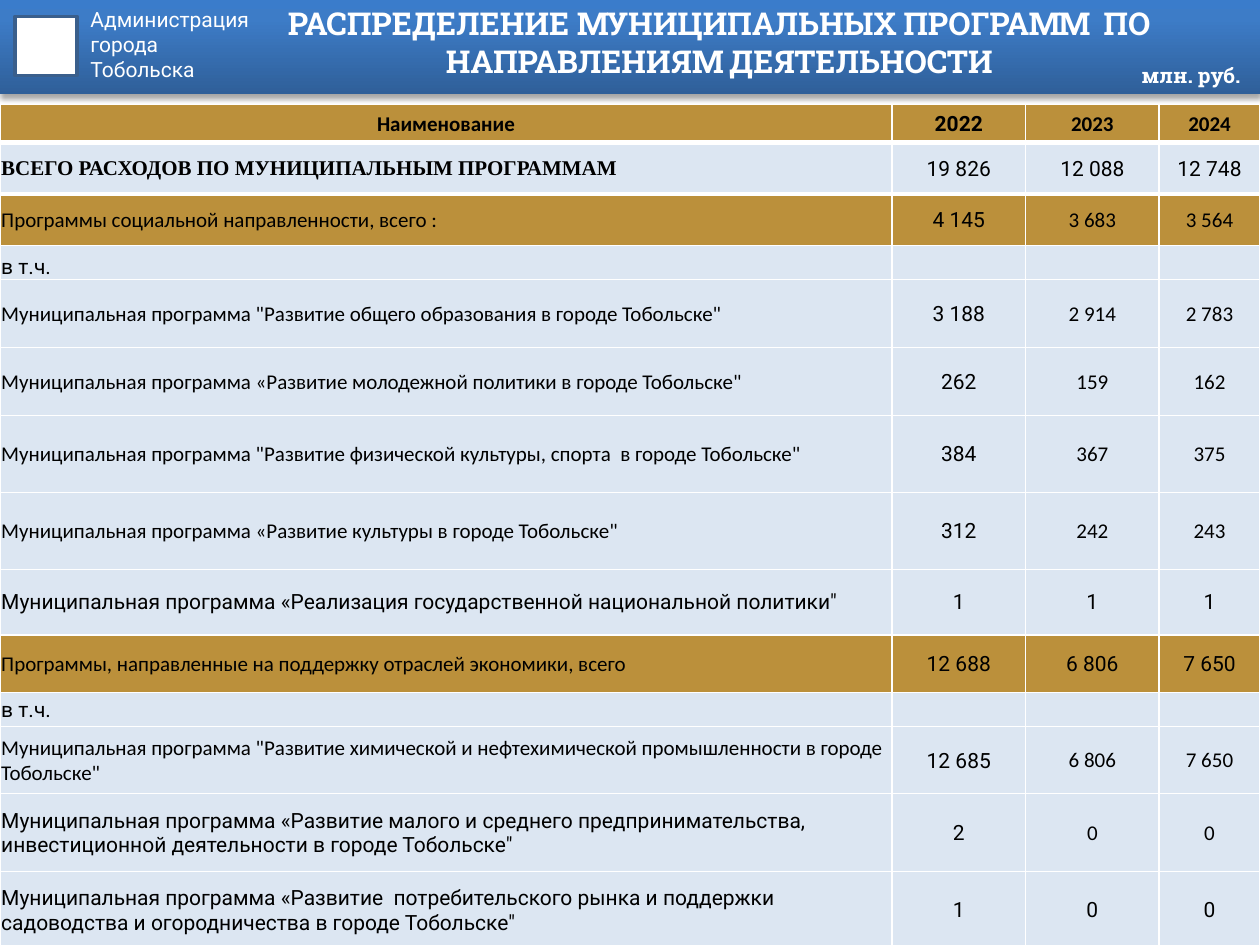
"""Build the slide on municipal programme spending by field of activity."""
from copy import deepcopy

from lxml import etree
from pptx import Presentation
from pptx.dml.color import RGBColor
from pptx.enum.shapes import MSO_SHAPE
from pptx.enum.text import MSO_ANCHOR, MSO_AUTO_SIZE, PP_ALIGN
from pptx.oxml.ns import qn
from pptx.util import Inches, Pt

RECT = MSO_SHAPE.RECTANGLE
GROW = MSO_AUTO_SIZE.SHAPE_TO_FIT_TEXT
LEFT, CENTER = PP_ALIGN.LEFT, PP_ALIGN.CENTER
TOP, MIDDLE, BOTTOM = MSO_ANCHOR.TOP, MSO_ANCHOR.MIDDLE, MSO_ANCHOR.BOTTOM

COLORS = {"white": "FFFFFF", "black": "000000", "gold": "BB903B",
          "pale": "DCE6F2", "frame": "3A5F8C"}
BANNER = [(0, "2F5F99"), (0.8, "3D7CC7"), (1, "3A7CCB")]
FONTS = {"C": "Calibri", "R": "Roboto", "T": "Times New Roman"}

OFFICE = ["Администрация", "города", "Тобольска"]
TITLE = ["РАСПРЕДЕЛЕНИЕ МУНИЦИПАЛЬНЫХ ПРОГРАММ  ПО НАПРАВЛЕНИЯМ ДЕЯТЕЛЬНОСТИ"]
UNIT = ["млн. руб."]

COLS = [7.08, 1.06, 1.06, 0.8]
ROWS = [
    (0.3, "gold", "CRCC", ["Наименование", "2022", "2023", "2024"]),
    (0.41, "pale", "TRRR", ["ВСЕГО РАСХОДОВ ПО МУНИЦИПАЛЬНЫМ ПРОГРАММАМ",
                            "19 826", "12 088", "12 748"]),
    (0.41, "gold", "CRCC", ["Программы социальной направленности, всего :",
                            "4 145", "3 683", "3 564"]),
    (0.27, "pale", "RRRR", ["в т.ч.", "", "", ""]),
    (0.54, "pale", "CRCC", [
        'Муниципальная программа "Развитие общего образования в городе Тобольске"',
        "3 188", "2 914", "2 783"]),
    (0.54, "pale", "CRCC", [
        'Муниципальная программа «Развитие молодежной политики в городе Тобольске"',
        "262", "159", "162"]),
    (0.61, "pale", "CRCC", [
        'Муниципальная программа "Развитие физической культуры, спорта  в городе Тобольске"',
        "384", "367", "375"]),
    (0.61, "pale", "CRCC", [
        'Муниципальная программа «Развитие культуры в городе Тобольске"',
        "312", "242", "243"]),
    (0.52, "pale", "RRRR", [
        'Муниципальная программа «Реализация государственной национальной политики"',
        "1", "1", "1"]),
    (0.46, "gold", "CRRR", [
        "Программы, направленные на поддержку отраслей экономики, всего",
        "12 688", "6 806", "7 650"]),
    (0.27, "pale", "RRRR", ["в т.ч.", "", "", ""]),
    (0.53, "pale", "CRCC", [
        'Муниципальная программа "Развитие химической и нефтехимической '
        'промышленности в городе Тобольске"',
        "12 685", "6 806", "7 650"]),
    (0.62, "pale", "RRCC", [
        'Муниципальная программа «Развитие малого и среднего предпринимательства, '
        'инвестиционной деятельности в городе Тобольске"',
        "2", "0", "0"]),
    (0.61, "pale", "RRRR", [
        'Муниципальная программа «Развитие  потребительского рынка и поддержки '
        'садоводства и огородничества в городе Тобольске"',
        "1", "0", "0"]),
]


def color(name):
    return RGBColor.from_string(COLORS[name])


def add_run(para, text, font, size, tint, bold=False):
    run = para.add_run()
    run.text = text
    run.font.name, run.font.size, run.font.bold = font, Pt(size), bold
    run.font.color.rgb = color(tint)


def add_box(slide, place, lines, font, size, bold=False, align=LEFT,
            anchor=TOP):
    frame = slide.shapes.add_textbox(*map(Inches, place)).text_frame
    frame.word_wrap, frame.vertical_anchor = True, anchor
    for i, line in enumerate(lines):
        para = frame.add_paragraph() if i else frame.paragraphs[0]
        para.alignment = align
        add_run(para, line, font, size, "white", bold)
    return frame


def add_rect(slide, *place):
    shape = slide.shapes.add_shape(RECT, *map(Inches, place))
    shape.shadow.inherit = False
    return shape


def add_banner(slide):
    bar = add_rect(slide, 0, 0, 10, 0.75)
    bar.line.fill.background()
    bar.fill.gradient()
    bar.fill.gradient_angle = 90
    props = bar.element.spPr
    stops = props.find(".//" + qn("a:gsLst"))
    stops.append(deepcopy(stops[0]))
    for stop, (pos, tint) in zip(bar.fill.gradient_stops, BANNER):
        stop.position, stop.color.rgb = pos, RGBColor.from_string(tint)
    shade = etree.SubElement(
        props.find(qn("a:effectLst")), qn("a:outerShdw"), blurRad="40000",
        dist="23000", dir="5400000", rotWithShape="0")
    tint = etree.SubElement(shade, qn("a:srgbClr"), val=COLORS["black"])
    etree.SubElement(tint, qn("a:alpha"), val="35000")


def add_edges(cell, widths):
    props = cell._tc.get_or_add_tcPr()
    for side, width in zip("LRTB", widths):
        line = etree.SubElement(props, qn("a:ln" + side), w=str(Pt(width)))
        fill = etree.SubElement(line, qn("a:solidFill"))
        etree.SubElement(fill, qn("a:srgbClr"), val=COLORS["white"])


def add_grid(slide):
    high = sum(row[0] for row in ROWS)
    table = slide.shapes.add_table(
        len(ROWS), len(COLS), 0, Inches(0.83), Inches(10), Inches(high)).table
    for col, width in zip(table.columns, COLS):
        col.width = Inches(width)
    for r, (height, tint, fonts, texts) in enumerate(ROWS):
        table.rows[r].height = Inches(height)
        edges = (1, 1, 3 if r in (1, 2) else 1, 3 if r < 2 else 1)
        for c, (key, text) in enumerate(zip(fonts, texts)):
            cell = table.cell(r, c)
            cell.margin_left = cell.margin_right = cell.margin_top = Inches(0.01)
            cell.margin_bottom = 0
            cell.vertical_anchor = BOTTOM if r == 3 else MIDDLE
            add_edges(cell, edges)
            cell.fill.solid()
            cell.fill.fore_color.rgb = color(tint)
            para = cell.text_frame.paragraphs[0]
            para.alignment = CENTER if c or r == 0 else LEFT
            if text:
                bold = r == 0 or (r, c) == (1, 0)
                add_run(para, text, FONTS[key], 12, "black", bold)
            else:
                etree.SubElement(para._p, qn("a:endParaRPr"), sz="1200")


def main():
    deck = Presentation()
    deck.slide_width, deck.slide_height = Inches(10), Inches(7.5)
    slide = deck.slides.add_slide(deck.slide_layouts[6])
    add_banner(slide)
    badge = add_rect(slide, 0.12, 0.13, 0.49, 0.47)
    badge.fill.solid()
    badge.fill.fore_color.rgb = color("white")
    badge.line.color.rgb, badge.line.width = color("frame"), Pt(2)
    add_box(slide, (0.62, 0, 2.34, 0.91), OFFICE, "Roboto", 12)
    add_box(slide, (2.01, 0, 7.4, 0.66), TITLE, "Roboto Slab", 18, True,
            CENTER, MIDDLE)
    add_grid(slide)
    unit = add_box(slide, (8.96, 0.45, 0.98, 0.3), UNIT, "Roboto Slab", 12, True)
    unit.margin_right, unit.word_wrap, unit.auto_size = 0, False, GROW
    deck.save("out.pptx")


if __name__ == "__main__":
    main()
